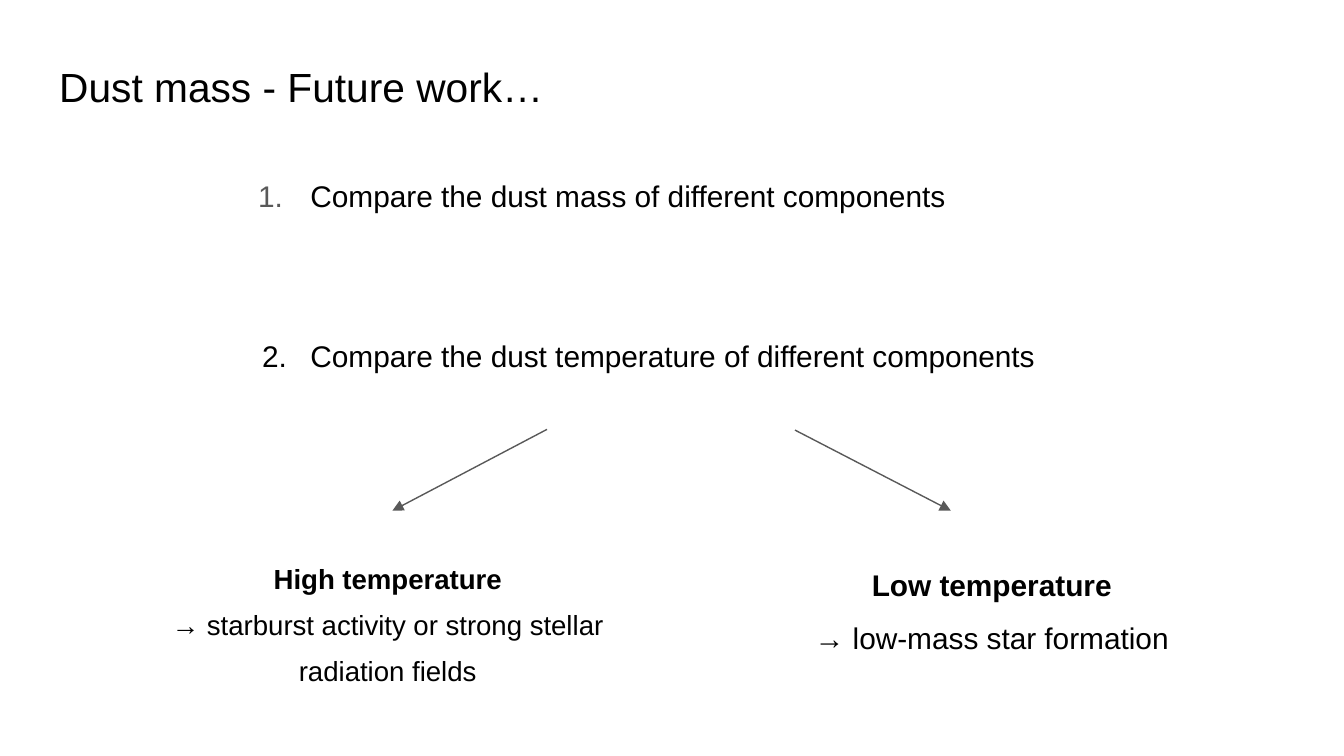
from lxml import etree
from pptx import Presentation
from pptx import util as u
from pptx.dml.color import RGBColor
from pptx.enum import shapes, text
from pptx.oxml.ns import qn

PX = 4572
FONT = "Arial"
COLORS = {"ink": "000000", "grey": "595959"}


def px(length):
    """Turn px, two hundred to the inch, into EMU."""
    return u.Emu(length * PX)


def color(name):
    """Look up a colour by its name."""
    return RGBColor.from_string(COLORS[name])


def place(box, left, top, width, height):
    """Position a box and set its margins and wrapping."""
    box.left, box.top, box.width, box.height = map(px, (left, top, width, height))
    frame = box.text_frame
    frame.margin_left = frame.margin_right = px(20)
    frame.margin_top = frame.margin_bottom = px(20)
    frame.word_wrap = True
    frame.auto_size = text.MSO_AUTO_SIZE.NONE
    frame.vertical_anchor = text.MSO_ANCHOR.TOP


def write(box, lines, size, spacing, align=text.PP_ALIGN.LEFT):
    """Fill a box with one paragraph per line in a common style."""
    frame = box.text_frame
    frame.text = "\n".join(lines)
    for para in frame.paragraphs:
        para.alignment = align
        para.line_spacing = spacing
        para.space_before = u.Pt(0)
        for span in para.runs:
            span.font.name = FONT
            span.font.size = u.Pt(size)
            span.font.color.rgb = color("ink")


def number(para, name, hanging):
    """Number a paragraph with a hanging figure in the named colour."""
    props = para._p.get_or_add_pPr()
    props.set("marL", str(px(100)))
    props.set("indent", str(-px(hanging)))
    fill = etree.SubElement(props, qn("a:buClr"))
    etree.SubElement(fill, qn("a:srgbClr"), val=COLORS[name])
    etree.SubElement(props, qn("a:buFont"), typeface=FONT)
    etree.SubElement(props, qn("a:buAutoNum"), type="arabicPeriod")


def add_title(page, title):
    """Fill the title placeholder."""
    box = page.shapes.title
    place(box, 68, 61, 932, 122)
    write(box, [title], 21.8, 1.15)


def add_tasks(page, tasks):
    """Fill the body placeholder with the numbered tasks."""
    box = page.placeholders[1]
    place(box, 342, 218, 1316, 412)
    write(box, tasks, 16, 1.5)
    first, second = box.text_frame.paragraphs
    second.space_before = u.Pt(57)
    number(first, "grey", 78)
    number(second, "ink", 72)


def add_outcome(page, left, heading, meaning, size, spacing):
    """Add a centred bold heading with its meaning below."""
    box = page.shapes.add_textbox(0, 0, 0, 0)
    place(box, left, 796, 688, 230)
    write(box, [heading, "→ " + meaning], size, spacing, text.PP_ALIGN.CENTER)
    box.text_frame.paragraphs[0].runs[0].font.bold = True


def add_arrow(page, start, end):
    """Add a thin grey arrow from start to end."""
    arrow = page.shapes.add_connector(
        shapes.MSO_CONNECTOR.STRAIGHT, *map(px, start + end))
    arrow.line.color.rgb = color("grey")
    arrow.line.width = u.Pt(0.75)
    etree.SubElement(arrow.line._get_or_add_ln(), qn("a:tailEnd"), type="triangle")
    etree.SubElement(arrow._element.spPr, qn("a:effectLst"))


def main():
    """Build the slide and save it."""
    deck = Presentation()
    deck.slide_width, deck.slide_height = px(2000), px(1125)
    page = deck.slides.add_slide(deck.slide_layouts[1])
    add_title(page, "Dust mass - Future work…")
    add_tasks(page, ["Compare the dust mass of different components",
                     "Compare the dust temperature of different components"])
    add_arrow(page, (814, 639), (584, 760))
    add_outcome(page, 233, "High temperature",
                "starburst activity or strong stellar radiation fields", 14.8, 1.4)
    add_arrow(page, (1183, 640), (1415, 760))
    add_outcome(page, 1132, "Low temperature", "low-mass star formation", 16, 1.5)
    deck.save("out.pptx")


if __name__ == "__main__":
    main()
